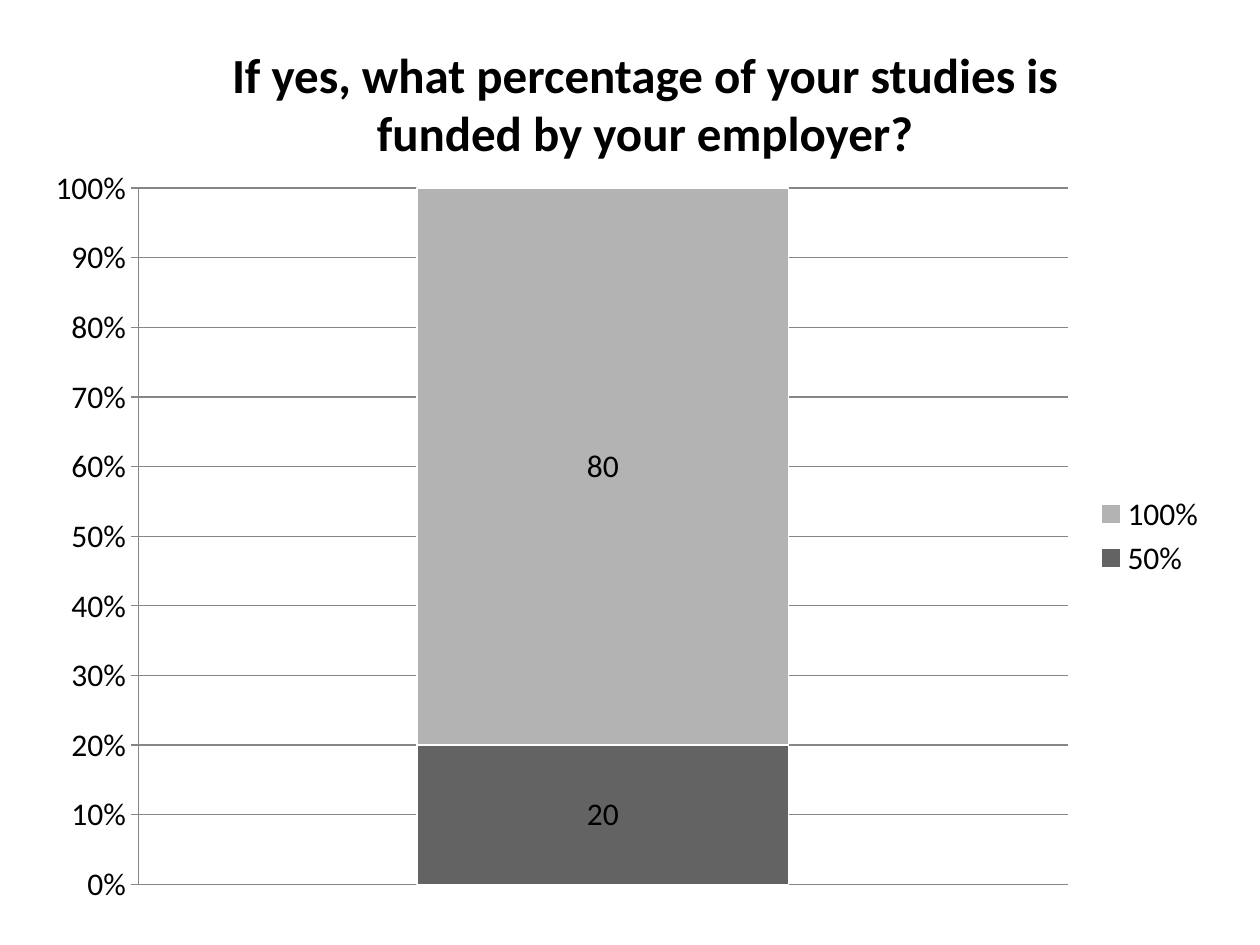
from pptx import Presentation
from pptx.chart.data import CategoryChartData
from pptx.dml.color import RGBColor
from pptx.enum.chart import XL_CHART_TYPE as ChartType, XL_LABEL_POSITION as LabelPos
from pptx.enum.chart import XL_LEGEND_POSITION as LegendPos, XL_TICK_MARK as TickMark
from pptx.enum.text import MSO_ANCHOR, PP_ALIGN
from pptx.util import Cm, Pt

# Content
QUESTION = "If yes, what percentage of your studies is funded by your employer?"
FUNDING = [("50%", 20, "dark"), ("100%", 80, "light")]

FONT = "Calibri"
COLORS = {"text": "000000", "dark": "636363", "light": "B3B3B3",
          "grid": "868686", "edge": "FFFFFF"}


def rgb(name):
    return RGBColor.from_string(COLORS[name])


def style_font(font, size, bold=False):
    font.name, font.size, font.bold = FONT, Pt(size), bold
    font.color.rgb = rgb("text")


def style_line(line, color):
    line.color.rgb = rgb(color)
    line.width = Pt(0.75)


deck = Presentation()
deck.slide_width, deck.slide_height = Cm(25.4), Cm(19.05)
slide = deck.slides.add_slide(deck.slide_layouts[5])

# Question as title
title = slide.shapes.title
title.left, title.top, title.width, title.height = Cm(3.5), Cm(0.76), Cm(19), Cm(2.64)
title.text_frame.text = QUESTION
title.text_frame.word_wrap = True
title.text_frame.vertical_anchor = MSO_ANCHOR.TOP
heading = title.text_frame.paragraphs[0]
heading.alignment = PP_ALIGN.CENTER
style_font(heading.font, 28, bold=True)

# Funding chart
funding = CategoryChartData()
funding.categories = ["1"]
for share, percent, _ in FUNDING:
    funding.add_series(share, [percent])
chart = slide.shapes.add_chart(ChartType.COLUMN_STACKED_100, Cm(0.64), Cm(3.1),
                               Cm(23.93), Cm(15.42), funding).chart
chart.has_title = False
style_font(chart.font, 18)

# Stacked column
plot = chart.plots[0]
plot.gap_width, plot.overlap = 150, 100
plot.vary_by_categories = False
for series, (_, _, color) in zip(plot.series, FUNDING):
    series.format.fill.solid()
    series.format.fill.fore_color.rgb = rgb(color)
    style_line(series.format.line, "edge")
    labels = series.data_labels
    labels.show_value = True
    labels.position = LabelPos.CENTER
    style_font(labels.font, 18)

# Axes
chart.category_axis.visible = False
percent_axis = chart.value_axis
percent_axis.minimum_scale, percent_axis.maximum_scale = 0, 1
percent_axis.major_unit = 0.1
percent_axis.major_tick_mark = TickMark.OUTSIDE
percent_axis.tick_labels.number_format = "0%"
percent_axis.tick_labels.number_format_is_linked = False
percent_axis.has_major_gridlines = True
for line in (percent_axis.format.line, percent_axis.major_gridlines.format.line):
    style_line(line, "grid")

# Legend
chart.has_legend = True
chart.legend.position = LegendPos.RIGHT
chart.legend.include_in_layout = False
style_font(chart.legend.font, 18)

deck.save("out.pptx")
